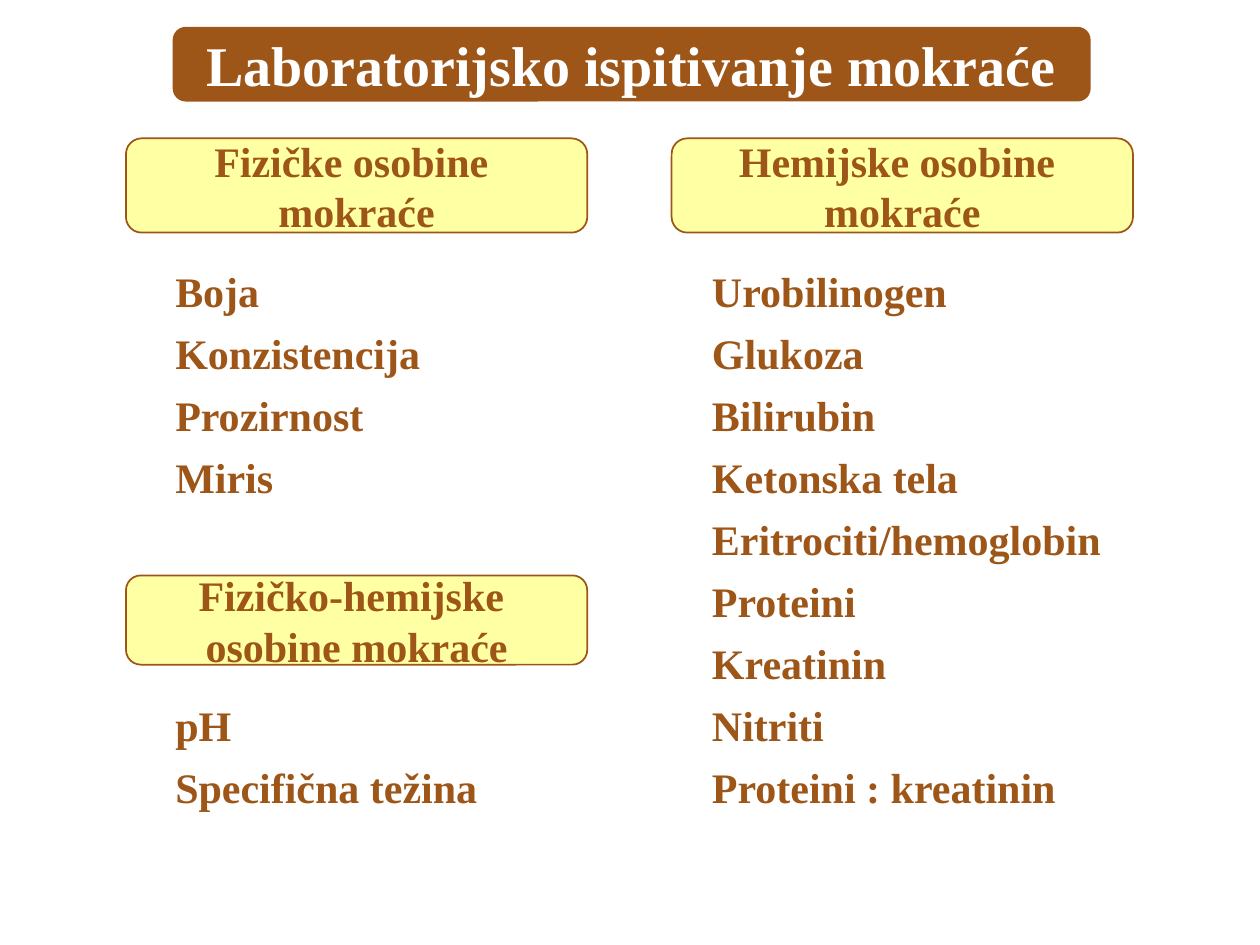
from dataclasses import dataclass

import pptx
import pptx.dml.color
import pptx.enum.shapes
import pptx.enum.text
import pptx.util
from pptx.util import Cm

ALIGN = pptx.enum.text.PP_ALIGN


@dataclass(frozen=True)
class Theme:
    font: str = "Times New Roman"
    brown: str = "9D5618"
    yellow: str = "FFFFA3"
    white: str = "FFFFFF"
    title_size: int = 32
    body_size: int = 24
    line_width: int = 1


def rgb(value):
    return pptx.dml.color.RGBColor.from_string(value)


def write_text(shape, text, *, font, size, color, align):
    """Fill the shape with bold text, one paragraph per line."""
    frame = shape.text_frame
    frame.word_wrap = True
    frame.vertical_anchor = pptx.enum.text.MSO_ANCHOR.MIDDLE
    frame.text = text
    for paragraph in frame.paragraphs:
        paragraph.alignment = align
        paragraph.font.name = font
        paragraph.font.size = pptx.util.Pt(size)
        paragraph.font.bold = True
        paragraph.font.color.rgb = rgb(color)


class SlideBuilder:
    def __init__(self, slide, theme):
        self.slide = slide
        self.theme = theme

    def rounded_box(self, left, top, width, height, fill=None):
        shape = self.slide.shapes.add_shape(
            pptx.enum.shapes.MSO_SHAPE.ROUNDED_RECTANGLE,
            Cm(left), Cm(top), Cm(width), Cm(height))
        shape.shadow.inherit = False
        if fill:
            shape.fill.solid()
            shape.fill.fore_color.rgb = rgb(fill)
            shape.line.color.rgb = rgb(self.theme.brown)
            shape.line.width = pptx.util.Pt(self.theme.line_width)
        else:
            shape.fill.background()
            shape.line.fill.background()
        return shape

    def title(self, text):
        theme = self.theme
        shape = self.rounded_box(3.5, 0.56, 18.47, 1.47, theme.brown)
        write_text(shape, text, font=theme.font, size=theme.title_size,
                   color=theme.white, align=ALIGN.CENTER)

    def heading(self, text, left, top, height):
        theme = self.theme
        shape = self.rounded_box(left, top, COLUMN_WIDTH, height, theme.yellow)
        write_text(shape, text, font=theme.font, size=theme.body_size,
                   color=theme.brown, align=ALIGN.CENTER)

    def items(self, texts, left, first_row=0):
        """Place one label per row of the shared row grid."""
        theme = self.theme
        for row, text in enumerate(texts, first_row):
            shape = self.rounded_box(left, ROWS_TOP + row * ROW_PITCH,
                                     COLUMN_WIDTH, ROW_HEIGHT)
            write_text(shape, text, font=theme.font, size=theme.body_size,
                       color=theme.brown, align=ALIGN.LEFT)


COLUMN_WIDTH = 9.3
ROWS_TOP, ROW_PITCH, ROW_HEIGHT = 5.3, 1.25, 1.12
LEFT_HEADING, RIGHT_HEADING = 2.54, 13.54
LEFT_ITEMS, RIGHT_ITEMS = 3.23, 14.05
HEADING_TOP, HEADING_HEIGHT = 2.79, 1.9


def main():
    presentation = pptx.Presentation()
    presentation.slide_width = Cm(25.4)
    presentation.slide_height = Cm(19.05)
    slide = presentation.slides.add_slide(presentation.slide_layouts[6])
    builder = SlideBuilder(slide, Theme())

    builder.title("Laboratorijsko ispitivanje mokraće")

    builder.heading("Fizičke osobine \nmokraće", LEFT_HEADING, HEADING_TOP, HEADING_HEIGHT)
    builder.items(["Boja", "Konzistencija", "Prozirnost", "Miris"], LEFT_ITEMS)

    builder.heading("Fizičko-hemijske \nosobine mokraće", LEFT_HEADING, 11.6, 1.8)
    builder.items(["pH", "Specifična težina"], LEFT_ITEMS, first_row=7)

    builder.heading("Hemijske osobine \nmokraće", RIGHT_HEADING, HEADING_TOP, HEADING_HEIGHT)
    builder.items(["Urobilinogen", "Glukoza", "Bilirubin", "Ketonska tela",
                   "Eritrociti/hemoglobin", "Proteini", "Kreatinin", "Nitriti",
                   "Proteini : kreatinin"], RIGHT_ITEMS)

    presentation.save("out.pptx")


if __name__ == "__main__":
    main()
